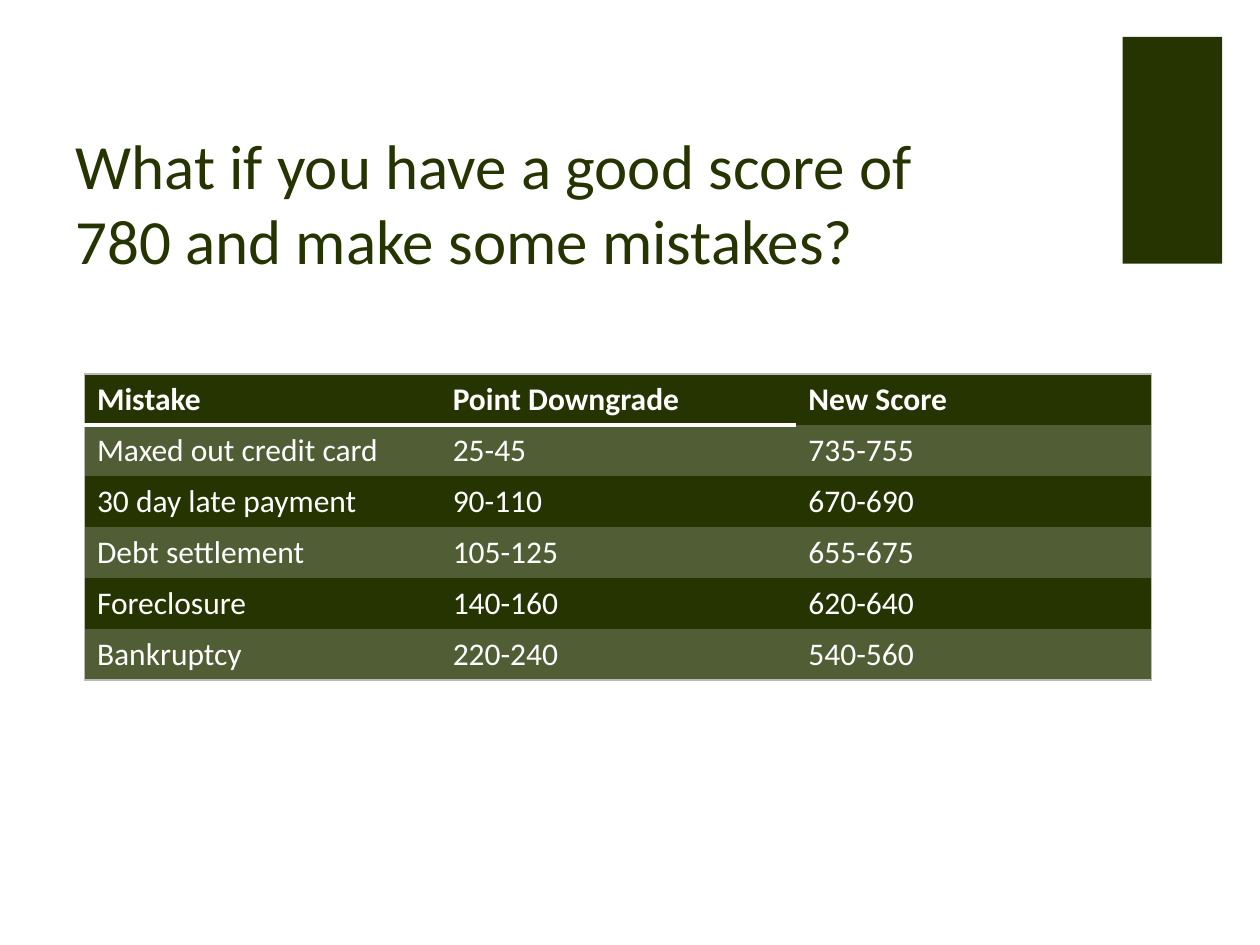
from lxml import etree
from pptx import Presentation
from pptx import util as u
from pptx.dml.color import RGBColor
from pptx.enum import shapes, text
from pptx.oxml import ns

DARK_GREEN = RGBColor(0x26, 0x34, 0x01)
LIGHT_GREEN = RGBColor(0x51, 0x5D, 0x34)
GREY = RGBColor(0xBA, 0xBB, 0xB9)
WHITE = RGBColor(0xFF, 0xFF, 0xFF)

WIDTH, HEIGHT = u.Inches(10), u.Inches(7.5)
ACCENT_BOX = (0.891, 0.039, 0.079, 0.24)
TITLE_BOX = (0.05, 0.133, 0.712, 0.167)
TABLE_BOX = (0.067, 0.396, 0.847, 0.324)

PLAIN_STYLE = "{2D5ABB26-0587-4C30-8999-92F81FD0307C}"
TITLE_FONT = {"name": "Calibri", "size": u.Pt(36)}
CELL_FONT = {"name": "Calibri", "size": u.Pt(18)}

TITLE = "What if you have a good score of 780 and make some mistakes?"
SCORES = [
    ("Mistake", "Point Downgrade", "New Score"),
    ("Maxed out credit card", "25-45", "735-755"),
    ("30 day late payment", "90-110", "670-690"),
    ("Debt settlement", "105-125", "655-675"),
    ("Foreclosure", "140-160", "620-640"),
    ("Bankruptcy", "220-240", "540-560"),
]


def place(box):
    """Turn shares of the slide into left, top, width and height."""
    return [u.Emu(round(share * side)) for share, side in zip(box, (WIDTH, HEIGHT) * 2)]


def format_font(font, color, values):
    """Apply a colour and a dict of values to a font."""
    font.color.rgb = color
    for name, value in values.items():
        setattr(font, name, value)


def add_accent(slide, box):
    """Draw the plain block at the top right."""
    shape = slide.shapes.add_shape(shapes.MSO_SHAPE.RECTANGLE, *place(box))
    shape.shadow.inherit = False
    shape.fill.solid()
    shape.fill.fore_color.rgb = DARK_GREEN
    shape.line.fill.background()


def add_title(slide, box):
    """Write the title at the bottom of its box."""
    frame = slide.shapes.add_textbox(*place(box)).text_frame
    frame.word_wrap = True
    frame.vertical_anchor = text.MSO_ANCHOR.BOTTOM
    paragraph = frame.paragraphs[0]
    paragraph.text = TITLE
    format_font(paragraph.runs[0].font, DARK_GREEN, TITLE_FONT)


def add_border(cell, side, color, points):
    """Draw one side of a cell, named L, R, T or B."""
    properties = cell._tc.get_or_add_tcPr()
    line = etree.SubElement(properties, ns.qn(f"a:ln{side}"), w=str(u.Pt(points)))
    fill = etree.SubElement(line, ns.qn("a:solidFill"))
    etree.SubElement(fill, ns.qn("a:srgbClr"), val=str(color))


def add_scores(slide, box):
    """Build the banded table of mistakes and scores."""
    left, top, width, height = place(box)
    row_count, column_count = len(SCORES), len(SCORES[0])
    table = slide.shapes.add_table(row_count, column_count, left, top, width, height).table
    table._tbl.tblPr.find(ns.qn("a:tableStyleId")).text = PLAIN_STYLE
    last_row, last_column = row_count - 1, column_count - 1
    for row, values in enumerate(SCORES):
        for column, value in enumerate(values):
            cell = table.cell(row, column)
            cell.text = value
            font = cell.text_frame.paragraphs[0].runs[0].font
            format_font(font, WHITE, {**CELL_FONT, "bold": row == 0})
            edges = {"L": column == 0, "R": column == last_column,
                     "T": row == 0, "B": row == last_row}
            for side, is_outer in edges.items():
                if is_outer:
                    add_border(cell, side, GREY, 1)
            if row == 0 and column < last_column:
                add_border(cell, "B", WHITE, 2.5)
            cell.fill.solid()
            cell.fill.fore_color.rgb = LIGHT_GREEN if row % 2 else DARK_GREEN


def main():
    """Build the slide and save it."""
    presentation = Presentation()
    presentation.slide_width, presentation.slide_height = WIDTH, HEIGHT
    slide = presentation.slides.add_slide(presentation.slide_layouts[6])
    add_accent(slide, ACCENT_BOX)
    add_title(slide, TITLE_BOX)
    add_scores(slide, TABLE_BOX)
    presentation.save("out.pptx")


if __name__ == "__main__":
    main()
